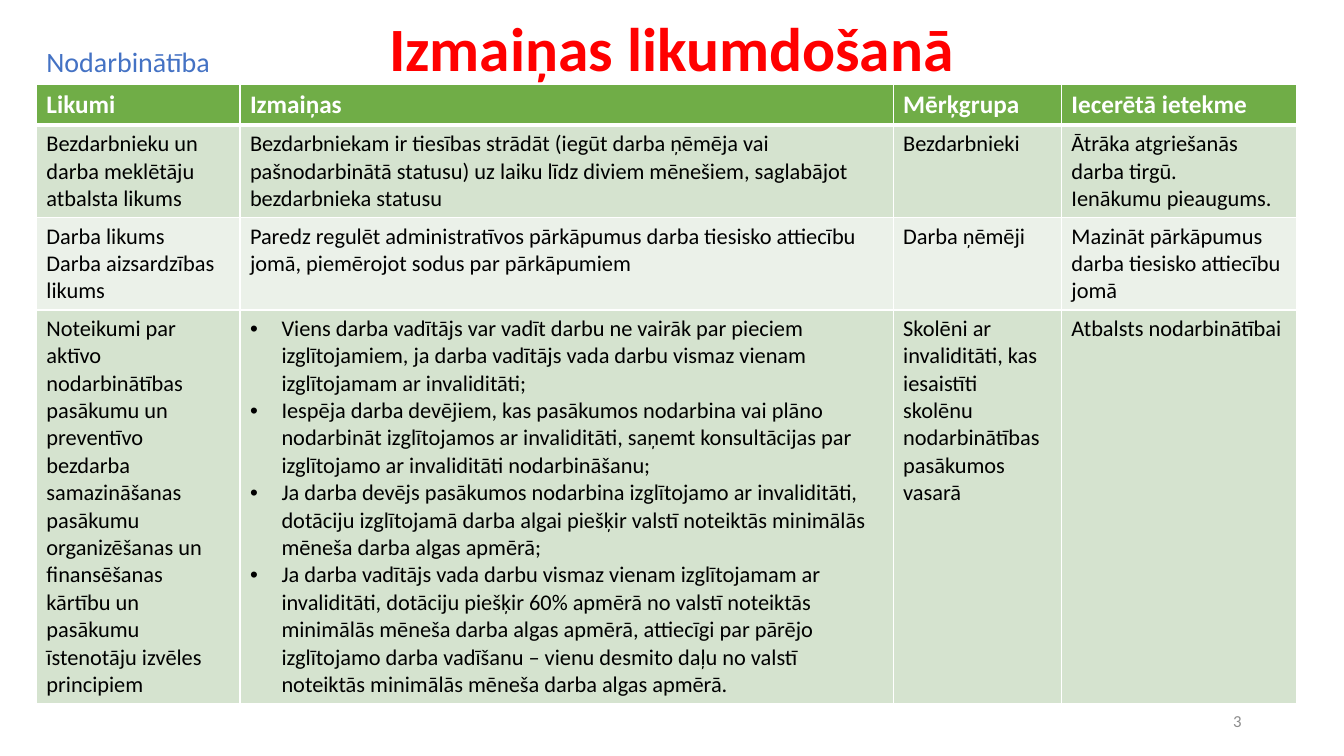
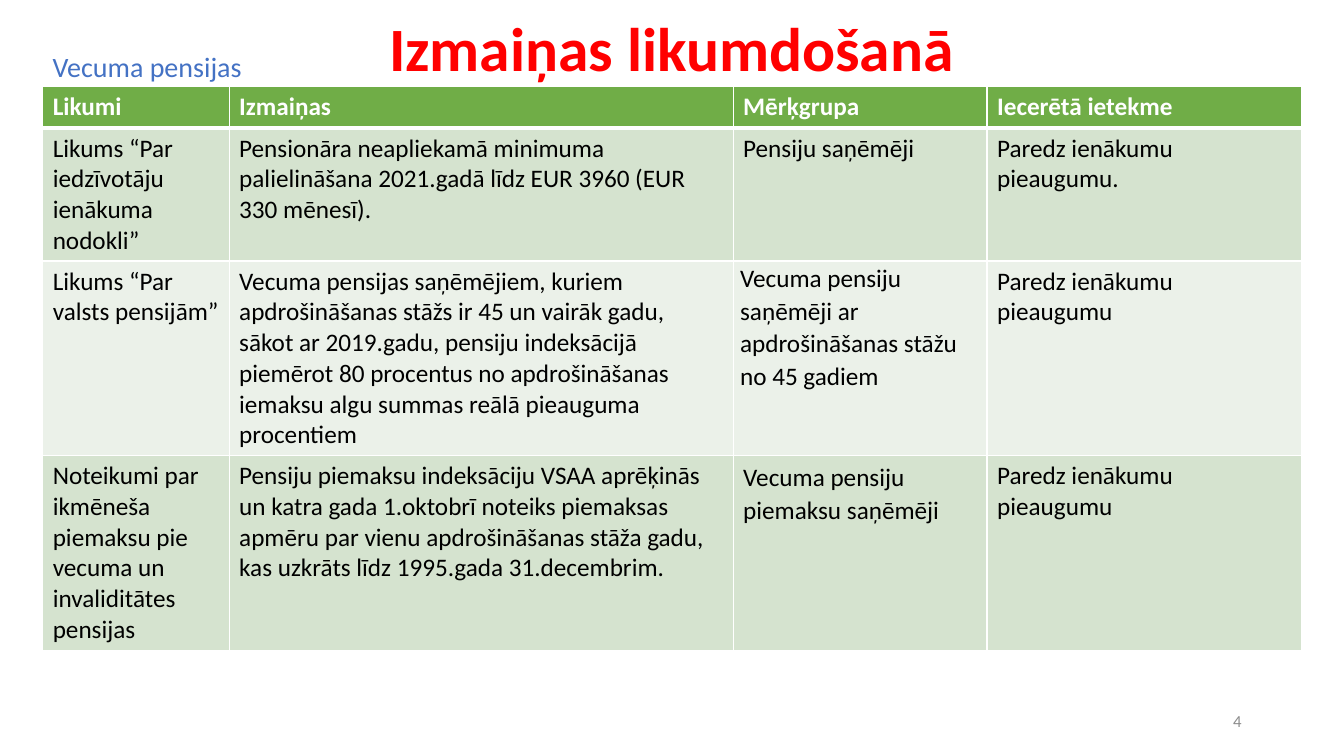
from dataclasses import dataclass

from lxml.etree import SubElement
from pptx import Presentation
from pptx.dml.color import RGBColor
from pptx.enum.text import MSO_ANCHOR as Anchor, MSO_AUTO_SIZE as AutoSize, PP_ALIGN as Align
from pptx.oxml.ns import qn
from pptx.util import Pt

FONT = "Calibri"
WHITE, BLACK, RED, BLUE, GRAY = "FFFFFF", "000000", "FF0000", "4472C4", "8C8C8C"
HEADER_FILL, BAND_FILLS = "70AD47", ("D5E3CF", "EBF1E9")
TITLE = "Izmaiņas likumdošanā"
HEADINGS = ("Likumi", "Izmaiņas", "Mērķgrupa", "Iecerētā ietekme")
FIRST_NUMBER = 3
HEADER_HEIGHT = 29.5
BULLET_INDENT = 22.5


@dataclass
class Entry:
    paragraphs: tuple
    bullets: bool = False
    spacing: float = None
    tight: bool = False


@dataclass
class Topic:
    name: str
    left: float
    label_top: float
    label_width: float
    table_top: float
    widths: tuple
    heights: tuple
    size: float
    rows: tuple


EMPLOYMENT = Topic(
    "Nodarbinātība", 26, 28, 137.5, 60,
    (145.4, 466.6, 120.2, 167.8), (66, 66, 281), 16,
    (
        (
            "Bezdarbnieku un darba meklētāju atbalsta likums",
            "Bezdarbniekam ir tiesības strādāt (iegūt darba ņēmēja vai pašnodarbinātā statusu) "
            "uz laiku līdz diviem mēnešiem, saglabājot bezdarbnieka statusu",
            "Bezdarbnieki",
            Entry(("Ātrāka atgriešanās darba tirgū.", "Ienākumu pieaugums.")),
        ),
        (
            Entry(("Darba likums", "Darba aizsardzības likums")),
            "Paredz regulēt administratīvos pārkāpumus darba tiesisko attiecību jomā, "
            "piemērojot sodus par pārkāpumiem",
            "Darba ņēmēji",
            "Mazināt pārkāpumus darba tiesisko attiecību jomā",
        ),
        (
            "Noteikumi par aktīvo nodarbinātības pasākumu un preventīvo bezdarba samazināšanas "
            "pasākumu organizēšanas un finansēšanas kārtību un pasākumu īstenotāju izvēles principiem",
            Entry((
                "Viens darba vadītājs var vadīt darbu ne vairāk par pieciem izglītojamiem, "
                "ja darba vadītājs vada darbu vismaz vienam izglītojamam ar invaliditāti;",
                "Iespēja darba devējiem, kas pasākumos nodarbina vai plāno nodarbināt izglītojamos "
                "ar invaliditāti, saņemt konsultācijas par izglītojamo ar invaliditāti nodarbināšanu;",
                "Ja darba devējs pasākumos nodarbina izglītojamo ar invaliditāti, dotāciju izglītojamā "
                "darba algai piešķir valstī noteiktās minimālās mēneša darba algas apmērā;",
                "Ja darba vadītājs vada darbu vismaz vienam izglītojamam ar invaliditāti, dotāciju "
                "piešķir 60% apmērā no valstī noteiktās minimālās mēneša darba algas apmērā, attiecīgi "
                "par pārējo izglītojamo darba vadīšanu – vienu desmito daļu no valstī noteiktās "
                "minimālās mēneša darba algas apmērā.",
            ), bullets=True),
            "Skolēni ar invaliditāti, kas iesaistīti skolēnu nodarbinātības pasākumos vasarā",
            "Atbalsts nodarbinātībai",
        ),
    ),
)

PENSIONS = Topic(
    "Vecuma pensijas", 30.5, 31.5, 175.5, 62,
    (133.2, 360, 181.4, 224.6), (95, 139, 139), 18,
    (
        (
            "Likums “Par iedzīvotāju ienākuma nodokli”",
            "Pensionāra neapliekamā minimuma palielināšana 2021.gadā līdz EUR 3960 (EUR 330 mēnesī).",
            "Pensiju saņēmēji",
            "Paredz ienākumu pieaugumu.",
        ),
        (
            "Likums “Par valsts pensijām”",
            "Vecuma pensijas saņēmējiem, kuriem apdrošināšanas stāžs ir 45 un vairāk gadu, sākot ar "
            "2019.gadu, pensiju indeksācijā piemērot 80 procentus no apdrošināšanas iemaksu algu "
            "summas reālā pieauguma procentiem",
            Entry(("Vecuma pensiju saņēmēji ar apdrošināšanas stāžu no 45 gadiem",),
                  spacing=1.07, tight=True),
            "Paredz ienākumu pieaugumu",
        ),
        (
            "Noteikumi par ikmēneša piemaksu pie vecuma un invaliditātes pensijas",
            "Pensiju piemaksu indeksāciju VSAA aprēķinās un katra gada 1.oktobrī noteiks piemaksas "
            "apmēru par vienu apdrošināšanas stāža gadu, kas uzkrāts līdz 1995.gada 31.decembrim.",
            Entry(("Vecuma pensiju piemaksu saņēmēji",), spacing=1.07),
            "Paredz ienākumu pieaugumu",
        ),
    ),
)


def color(value):
    return RGBColor.from_string(value)


def add_span(para, text, size, fill, bold=False):
    span = para.add_run()
    span.text = text
    span.font.name = FONT
    span.font.size = Pt(size)
    span.font.bold = bold
    span.font.color.rgb = color(fill)


def place(shape, left, top, width, height):
    shape.left, shape.top, shape.width, shape.height = map(Pt, (left, top, width, height))


def add_title(page):
    title = page.shapes.title
    place(title, 66, 0, 828, 73.5)
    frame = title.text_frame
    frame.auto_size = AutoSize.NONE
    frame.vertical_anchor = Anchor.MIDDLE
    para = frame.paragraphs[0]
    para.alignment = Align.CENTER
    para.line_spacing = 0.9
    add_span(para, TITLE, 44, RED, bold=True)


def add_label(page, text, area, size, fill, align=Align.LEFT, anchor=Anchor.TOP):
    box = page.shapes.add_textbox(*map(Pt, area))
    frame = box.text_frame
    frame.word_wrap = True
    frame.vertical_anchor = anchor
    para = frame.paragraphs[0]
    para.alignment = align
    add_span(para, text, size, fill)


def add_bullet(para):
    properties = para._p.get_or_add_pPr()
    properties.set("marL", str(Pt(BULLET_INDENT)))
    properties.set("indent", str(-Pt(BULLET_INDENT)))
    SubElement(properties, qn("a:buFont")).set("typeface", "Arial")
    SubElement(properties, qn("a:buChar")).set("char", "•")


def add_borders(cell, bottom):
    properties = cell._tc.get_or_add_tcPr()
    for side, width in (("L", 1), ("R", 1), ("T", 1), ("B", bottom)):
        line = SubElement(properties, qn(f"a:ln{side}"), w=str(Pt(width)))
        SubElement(SubElement(line, qn("a:solidFill")), qn("a:srgbClr"), val=WHITE)


def fill_cell(cell, content, size, ink, fill, bold=False, bottom=1):
    entry = content if isinstance(content, Entry) else Entry((content,))
    add_borders(cell, bottom)
    cell.fill.solid()
    cell.fill.fore_color.rgb = color(fill)
    if entry.tight:
        cell.margin_left = cell.margin_right = Pt(5)
        cell.margin_top = cell.margin_bottom = Pt(0)
    frame = cell.text_frame
    for index, text in enumerate(entry.paragraphs):
        para = frame.add_paragraph() if index else frame.paragraphs[0]
        if entry.spacing:
            para.line_spacing = entry.spacing
        if entry.bullets:
            add_bullet(para)
        add_span(para, text, size, ink, bold)


def add_law_table(page, topic):
    heights = (HEADER_HEIGHT, *topic.heights)
    area = (topic.left, topic.table_top, sum(topic.widths), sum(heights))
    table = page.shapes.add_table(len(heights), len(topic.widths), *map(Pt, area)).table
    for column, width in zip(table.columns, topic.widths):
        column.width = Pt(width)
    for row, height in zip(table.rows, heights):
        row.height = Pt(height)
    for cell, heading in zip(table.rows[0].cells, HEADINGS):
        fill_cell(cell, heading, 18, WHITE, HEADER_FILL, bold=True, bottom=3)
    for index, contents in enumerate(topic.rows):
        for cell, content in zip(table.rows[index + 1].cells, contents):
            fill_cell(cell, content, topic.size, BLACK, BAND_FILLS[index % 2])


def add_topic_page(deck, topic, number):
    page = deck.slides.add_slide(deck.slide_layouts[5])
    add_title(page)
    add_label(page, str(number), (678, 500.5, 216, 28.75), 12, GRAY, Align.RIGHT, Anchor.MIDDLE)
    add_law_table(page, topic)
    add_label(page, topic.name, (topic.left, topic.label_top, topic.label_width, 31.5), 20, BLUE)


def main():
    deck = Presentation()
    deck.slide_width, deck.slide_height = Pt(960), Pt(540)
    for number, topic in enumerate((EMPLOYMENT, PENSIONS), FIRST_NUMBER):
        add_topic_page(deck, topic, number)
    deck.save("out.pptx")


if __name__ == "__main__":
    main()
